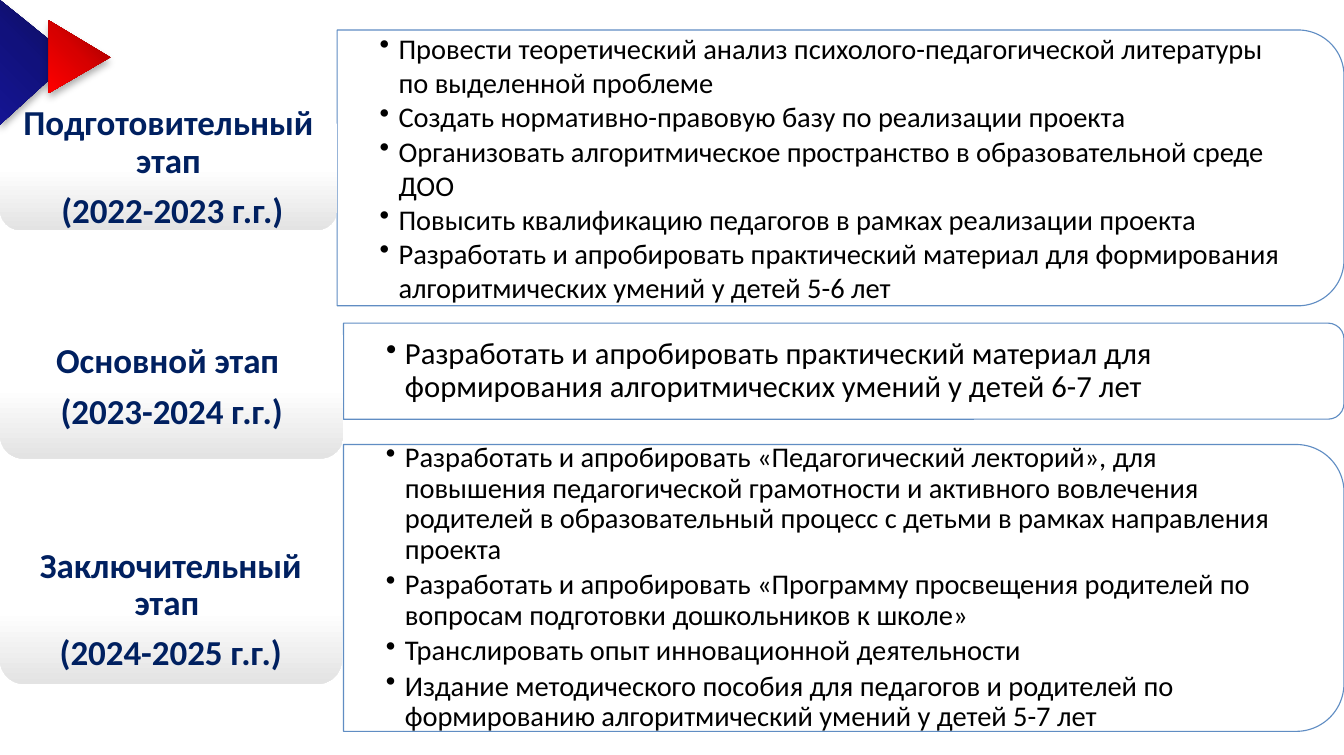
from copy import deepcopy
from dataclasses import dataclass

from lxml.etree import SubElement as Sub
from pptx import Presentation
from pptx.dml.color import RGBColor
from pptx.enum.shapes import MSO_SHAPE as Kind
from pptx.enum.text import MSO_ANCHOR as Anchor, PP_ALIGN as Align
from pptx.oxml.ns import qn
from pptx.shapes.autoshape import Shape
from pptx.slide import Slide
from pptx.text.text import TextFrame
from pptx.util import Pt

PX = 9144  # 100 px to the inch
FONT = "Calibri"
GREY = ("FFFFFF", "FFFFFF", "E3E3E3")


@dataclass
class Box:
    x: int
    y: int
    w: int
    h: int


@dataclass
class Stage:
    label: Box
    panel: Box
    title: list[str]
    tasks: list[str]
    size: int = 13
    line: float = 0.9
    after: float = 2


@dataclass
class Flag:
    box: Box
    tip: float
    tones: tuple[str, str, str]


STAGES = [
    Stage(Box(0, 67, 214, 79), Box(214, 19, 639, 175),
          ["Подготовительный этап", " (2022-2023 г.г.)"],
          ["Провести теоретический анализ психолого-педагогической литературы по выделенной проблеме",
           "Создать нормативно-правовую базу по реализации проекта",
           "Организовать алгоритмическое пространство в образовательной среде ДОО",
           "Повысить квалификацию педагогов в рамках реализации проекта",
           "Разработать и апробировать практический материал для формирования "
           "алгоритмических умений у детей 5-6 лет"],
          line=1, after=0),
    Stage(Box(0, 201, 218, 90), Box(218, 205, 635, 61),
          ["Основной этап ", "(2023-2024 г.г.)"],
          ["Разработать и апробировать практический материал для формирования "
           "алгоритмических умений у детей 6-7 лет"],
          size=14),
    Stage(Box(0, 341, 217, 93), Box(218, 282, 635, 182),
          ["Заключительный этап ", "(2024-2025 г.г.)"],
          ["Разработать и апробировать «Педагогический лекторий», для повышения "
           "педагогической грамотности и активного вовлечения родителей "
           "в образовательный процесс с детьми в рамках направления проекта",
           "Разработать и апробировать «Программу просвещения родителей по "
           "вопросам подготовки дошкольников к школе»",
           "Транслировать опыт инновационной деятельности",
           "Издание методического пособия для педагогов и родителей по "
           "формированию алгоритмический умений у детей 5-7 лет"]),
]
FLAGS = [
    Flag(Box(0, 0, 46, 79), 0.469, ("0C0C57", "11117C", "151593")),
    Flag(Box(31, 13, 39, 46), 0.509, ("970000", "D70000", "FF0000")),
]


def rgb(tone: str) -> RGBColor:
    return RGBColor.from_string(tone)


def add_kind(slide: Slide, kind: Kind, box: Box, turn: bool = False) -> Shape:
    """Add a plain shape that covers the box, turned 90 degrees if asked."""
    w, h = (box.h, box.w) if turn else (box.w, box.h)
    x, y = box.x + (box.w - w) / 2, box.y + (box.h - h) / 2
    shape = slide.shapes.add_shape(kind, *(int(n * PX) for n in (x, y, w, h)))
    shape.rotation = 90 if turn else 0
    shape.shadow.inherit = False
    shape.line.fill.background()
    return shape


def shade(shape: Shape, tones: tuple[str, str, str], angle: int) -> None:
    """Fill with a three-stop gradient, the angle running clockwise."""
    fill = shape.fill
    fill.gradient()
    fill.gradient_angle = 360 - angle
    stops = shape._element.spPr.find(qn("a:gradFill")).find(qn("a:gsLst"))
    stops.append(deepcopy(stops[-1]))
    for i, (stop, tone) in enumerate(zip(fill.gradient_stops, tones)):
        stop.position = i / 2
        stop.color.rgb = rgb(tone)


def fade(fill: object) -> None:
    """Make a solid fill 90 % opaque."""
    Sub(fill.find(qn("a:solidFill"))[0], qn("a:alpha"), val="90000")


def write(frame: TextFrame, lines: list[str], size: int, tone: str,
          line: float, after: float, dx: int, dy: int) -> None:
    frame.word_wrap = True
    frame.vertical_anchor = Anchor.MIDDLE
    frame.margin_left = frame.margin_right = dx * PX
    frame.margin_top = frame.margin_bottom = dy * PX
    for i, text in enumerate(lines):
        para = frame.add_paragraph() if i else frame.paragraphs[0]
        para.text = text
        para.line_spacing, para.space_after = line, Pt(after)
        font = para.font
        font.name, font.size, font.color.rgb = FONT, Pt(size), rgb(tone)


def add_panel(slide: Slide, stage: Stage) -> None:
    box = stage.panel
    shape = add_kind(slide, Kind.ROUND_2_SAME_RECTANGLE, box, turn=True)
    shape.fill.solid()
    shape.fill.fore_color.rgb = rgb("FFFFFF")
    shape.line.color.rgb = rgb("4F81BD")
    shape.line.width = Pt(0.5)
    props = shape._element.spPr
    fade(props)
    fade(props.find(qn("a:ln")))

    cut = round(box.h * 0.05)  # keeps text clear of the round corners
    area = (box.x, box.y + cut, box.w - cut, box.h - 2 * cut)
    frame = slide.shapes.add_textbox(*(n * PX for n in area)).text_frame
    write(frame, stage.tasks, stage.size, "000000",
          stage.line, stage.after, 27, 14)
    for para in frame.paragraphs:
        para.level = 1
        props = para._p.get_or_add_pPr()
        props.set("marL", str(12 * PX))
        props.set("indent", str(-12 * PX))
        Sub(props, qn("a:buChar"), char="•")
        props.append(props.find(qn("a:defRPr")))


def add_label(slide: Slide, stage: Stage) -> None:
    shape = add_kind(slide, Kind.ROUNDED_RECTANGLE, stage.label)
    shade(shape, GREY, 90)
    write(shape.text_frame, stage.title, 16, "002060", 0.9, 5.6, 7, 3)
    for para in shape.text_frame.paragraphs:
        para.alignment = Align.CENTER
        para.font.bold = True


def add_flag(slide: Slide, flag: Flag) -> None:
    shape = add_kind(slide, Kind.ISOSCELES_TRIANGLE, flag.box, turn=True)
    shape.adjustments[0] = flag.tip
    shade(shape, flag.tones, 45)
    glow = Sub(shape._element.spPr.find(qn("a:effectLst")), qn("a:outerShdw"),
               blurRad=str(Pt(3.5)), dist=str(Pt(2.2)), dir="5400000",
               rotWithShape="0")
    tone = Sub(glow, qn("a:srgbClr"), val="000000")
    Sub(tone, qn("a:alpha"), val="32000")


def main() -> None:
    deck = Presentation()
    deck.slide_width, deck.slide_height = 853 * PX, 479 * PX
    slide = deck.slides.add_slide(deck.slide_layouts[6])
    for stage in STAGES:
        add_panel(slide, stage)
        add_label(slide, stage)
    for flag in FLAGS:
        add_flag(slide, flag)
    deck.save("out.pptx")


if __name__ == "__main__":
    main()
